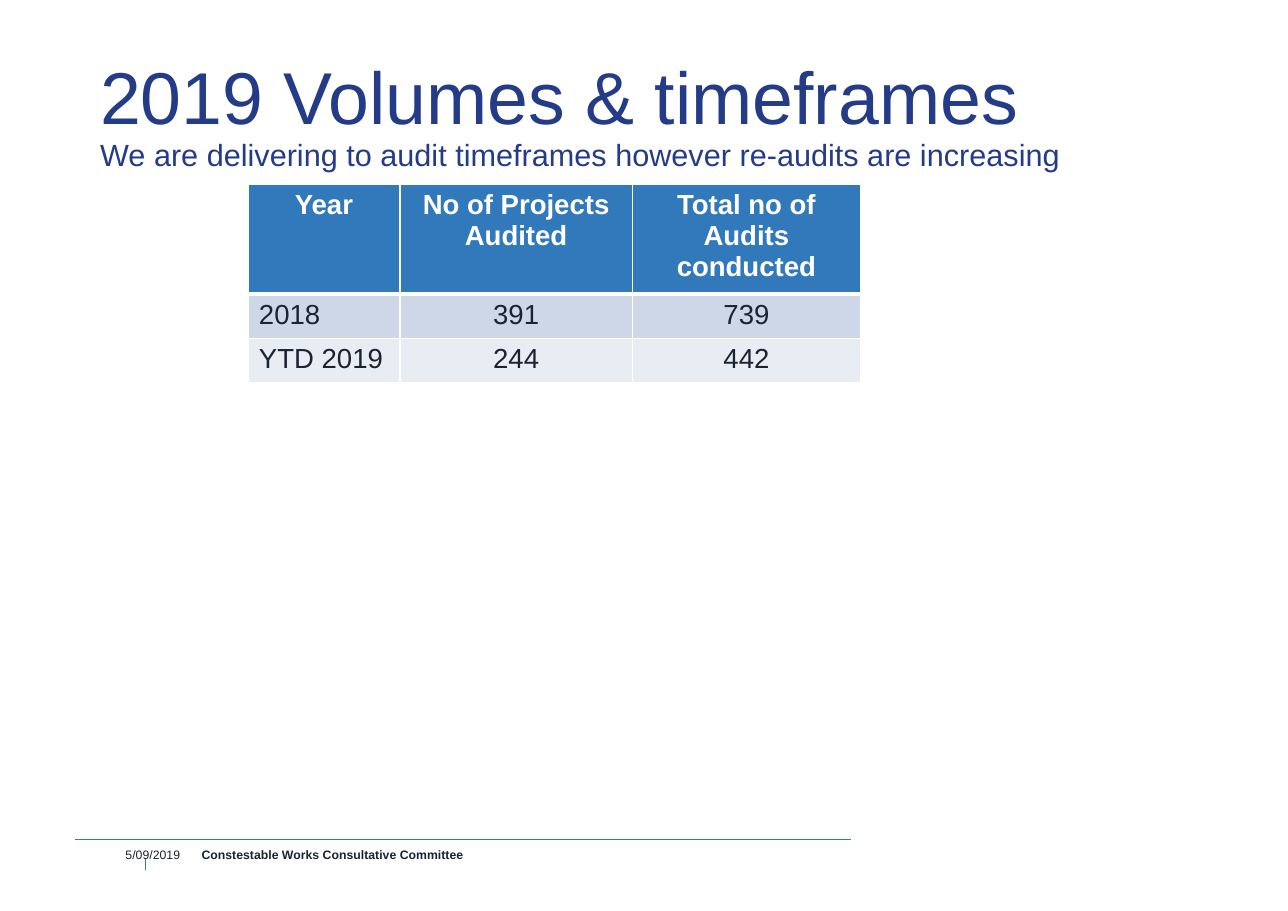
import dataclasses

import lxml.etree
import pptx
import pptx.dml.color
import pptx.enum.shapes
import pptx.enum.text
import pptx.oxml
import pptx.oxml.ns
import pptx.util

Inches = pptx.util.Inches
Pt = pptx.util.Pt
RGBColor = pptx.dml.color.RGBColor
PP_ALIGN = pptx.enum.text.PP_ALIGN
MIDDLE = pptx.enum.text.MSO_ANCHOR.MIDDLE
qn = pptx.oxml.ns.qn

SLIDE_WIDTH, SLIDE_HEIGHT = Inches(11.69), Inches(8.27)
FONT = "Arial"
NAVY = RGBColor(0x24, 0x3B, 0x87)
BLUE = RGBColor(0x32, 0x79, 0xBB)
INK = RGBColor(0x1A, 0x23, 0x31)
WHITE = RGBColor(0xFF, 0xFF, 0xFF)
BAND_DARK = RGBColor(0xCE, 0xD7, 0xE7)
BAND_LIGHT = RGBColor(0xE8, 0xEC, 0xF3)


@dataclasses.dataclass(frozen=True)
class Area:
    """A rectangle in percent of the slide's width and height."""
    left: float
    top: float
    width: float
    height: float


@dataclasses.dataclass(frozen=True)
class Rule:
    """A straight line, its ends in percent of the slide."""
    start: tuple[float, float]
    end: tuple[float, float]
    weight: float


@dataclasses.dataclass(frozen=True)
class Band:
    """The look and the wording of one table row."""
    texts: tuple[str, ...]
    height: float
    fill: RGBColor
    color: RGBColor
    bold: bool
    first_align: PP_ALIGN
    top_border: float
    bottom_border: float


FOOTER_RULES = (
    Rule((5.82, 92.14), (66.04, 92.14), 1),
    Rule((11.29, 94.2), (11.29, 95.53), 0.5),
)
TABLE_AREA = Area(19.25, 20.19, 47.56, 20.57)
COLUMN_WIDTHS = (11.8, 18.05, 17.71)
BANDS = (
    Band(("Year", "No of Projects Audited", "Total no of Audits conducted"),
         11.37, BLUE, WHITE, True, PP_ALIGN.CENTER, 1, 3),
    Band(("2018", "391", "739"), 4.6, BAND_DARK, INK, False, PP_ALIGN.LEFT, 3, 1),
    Band(("YTD 2019", "244", "442"), 4.6, BAND_LIGHT, INK, False, PP_ALIGN.LEFT, 1, 1),
)


def across(percent: float) -> int:
    return round(SLIDE_WIDTH * percent / 100)


def down(percent: float) -> int:
    return round(SLIDE_HEIGHT * percent / 100)


def place(area: Area) -> tuple[int, int, int, int]:
    return across(area.left), down(area.top), across(area.width), down(area.height)


def write(para, text: str, *, size: float, color: RGBColor, bold: bool = False) -> None:
    span = para.add_run()
    span.text = text
    span.font.name = FONT
    span.font.size = Pt(size)
    span.font.bold = bold
    span.font.color.rgb = color


def add_text_box(page, area: Area, left_inset: float = 0.1, right_inset: float = 0.1):
    """Add a vertically centred text box and return its first paragraph."""
    frame = page.shapes.add_textbox(*place(area)).text_frame
    frame.word_wrap = True
    frame.vertical_anchor = MIDDLE
    frame.margin_left, frame.margin_right = Inches(left_inset), Inches(right_inset)
    return frame.paragraphs[0]


def add_rule(page, rule: Rule) -> None:
    line = page.shapes.add_connector(
        pptx.enum.shapes.MSO_CONNECTOR.STRAIGHT,
        across(rule.start[0]), down(rule.start[1]),
        across(rule.end[0]), down(rule.end[1]))
    line.line.color.rgb = BLUE
    line.line.width = Pt(rule.weight)
    lxml.etree.SubElement(line._element.spPr, qn("a:effectLst"))


def set_borders(cell, top: float, bottom: float) -> None:
    properties = cell._tc.get_or_add_tcPr()
    weights = {"a:lnL": 1, "a:lnR": 1, "a:lnT": top, "a:lnB": bottom}
    for position, (side, weight) in enumerate(weights.items()):
        border = pptx.oxml.parse_xml(
            f'<{side} xmlns:a="http://schemas.openxmlformats.org/drawingml/2006/main" '
            f'w="{Pt(weight)}"><a:solidFill><a:srgbClr val="{WHITE}"/></a:solidFill></{side}>')
        properties.insert(position, border)


def add_volume_table(page) -> None:
    table = page.shapes.add_table(len(BANDS), len(COLUMN_WIDTHS), *place(TABLE_AREA)).table
    for column, width in zip(table.columns, COLUMN_WIDTHS):
        column.width = across(width)
    for row, band in zip(table.rows, BANDS):
        row.height = down(band.height)
        for index, (cell, text) in enumerate(zip(row.cells, band.texts)):
            cell.fill.solid()
            cell.fill.fore_color.rgb = band.fill
            set_borders(cell, band.top_border, band.bottom_border)
            para = cell.text_frame.paragraphs[0]
            para.alignment = PP_ALIGN.CENTER if index else band.first_align
            write(para, text, size=18, color=band.color, bold=band.bold)


def main() -> None:
    deck = pptx.Presentation()
    deck.slide_width, deck.slide_height = SLIDE_WIDTH, SLIDE_HEIGHT
    page = deck.slides.add_slide(deck.slide_layouts[6])

    # Footer lines
    for rule in FOOTER_RULES:
        add_rule(page, rule)

    # Title and subtitle
    title = add_text_box(page, Area(6.93, 5.8, 86.83, 14.15))
    title.line_spacing = 0.9
    write(title, "2019 Volumes & timeframes", size=48, color=NAVY)
    title.add_line_break()
    write(title, "We are delivering to audit timeframes however re-audits are increasing",
          size=20, color=NAVY)

    # Audit volumes
    add_volume_table(page)

    # Footer text
    date = add_text_box(page, Area(8.9, 92.02, 5.99, 3.51), right_inset=0)
    write(date, "5/09/2019", size=8, color=INK)
    committee = add_text_box(page, Area(15.65, 92.02, 55.18, 3.51), left_inset=0)
    write(committee, "Constestable Works Consultative Committee", size=8, color=INK, bold=True)

    deck.save("out.pptx")


if __name__ == "__main__":
    main()
